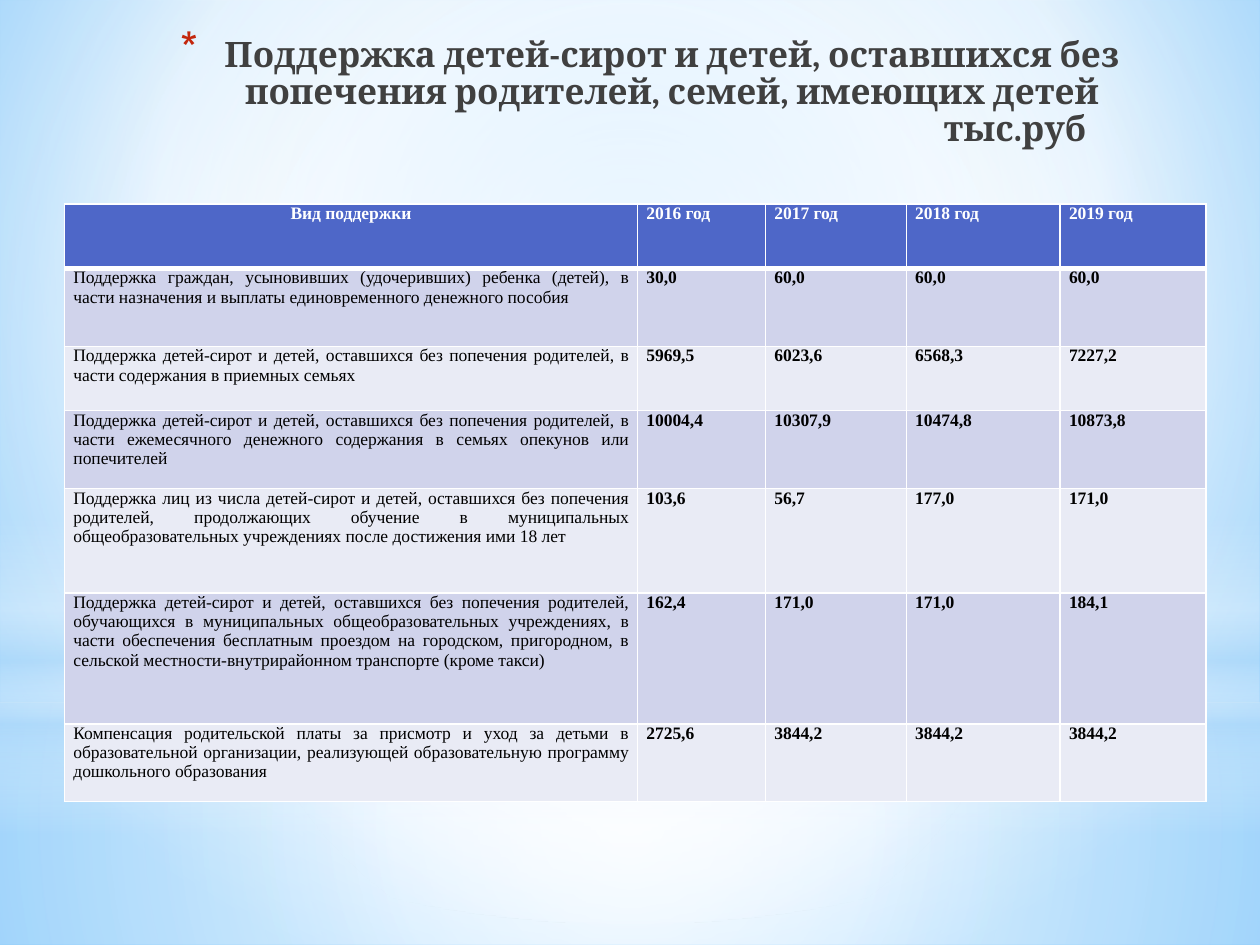
"""Builds the slide on support for orphans and families with children."""
from pptx import Presentation
from pptx.dml.color import RGBColor as RGB
from pptx.enum.shapes import MSO_SHAPE as Preset
from pptx.enum.text import MSO_ANCHOR as Anchor, MSO_AUTO_SIZE as AutoSize, PP_ALIGN as Align
from pptx.oxml import parse_xml
from pptx.oxml.ns import nsdecls, qn
from pptx.util import Cm, Pt

COLORS = {
    "white": "FFFFFF", "sky": "9ED5FF", "azure": "5BB9FF", "haze": "B4DCFA",
    "heading": "404040", "bullet": "C3260C", "text": "000000",
    "header": "4E67C8", "odd": "D0D3EB", "even": "E9EBF5",
}
CENTER = (50, 50, 50, 50)
BANDS = [
    (Preset.RECTANGLE, (0, 14.17, 25.4, 4.88),
     [(0, "white", 91), (37, "white", 76), (100, "haze", 79)], CENTER),
    (Preset.RECTANGLE, (0, 0, 25.4, 14.17),
     [(0, "white", 89), (48, "white", 62), (100, "haze", 79)], CENTER),
    (Preset.RECTANGLE, (0, 10.46, 25.4, 6.35),
     [(0, "white", 0), (29, "white", 30), (45, "haze", 40), (55, "white", 26),
      (65, "haze", 60), (100, "white", 0)], None),
    (Preset.OVAL, (0, 4.45, 25.4, 14.17), [(0, "white", 100), (56, "white", 0)], CENTER),
]
HEADING = "Поддержка детей-сирот и детей, оставшихся без попечения родителей, семей, имеющих детей"
UNIT = "тыс.руб"
COLUMN_WIDTHS = [11.55, 2.58, 2.84, 3.1, 2.94]
ROW_HEIGHTS = [1.3, 1.57, 1.3, 1.57, 2.1, 2.64, 1.57]
SUPPORT = [
    ["Вид поддержки", "2016 год", "2017 год", "2018 год", "2019 год"],
    ["Поддержка граждан, усыновивших (удочеривших) ребенка (детей), в части назначения "
     "и выплаты единовременного денежного пособия", "30,0", "60,0", "60,0", "60,0"],
    ["Поддержка детей-сирот и детей, оставшихся без попечения родителей, в части "
     "содержания в приемных семьях", "5969,5", "6023,6", "6568,3", "7227,2"],
    ["Поддержка детей-сирот и детей, оставшихся без попечения родителей, в части "
     "ежемесячного денежного содержания в семьях опекунов или попечителей",
     "10004,4", "10307,9", "10474,8", "10873,8"],
    ["Поддержка лиц из числа детей-сирот и детей, оставшихся без попечения родителей, "
     "продолжающих обучение в муниципальных общеобразовательных учреждениях после "
     "достижения ими 18 лет", "103,6", "56,7", "177,0", "171,0"],
    ["Поддержка детей-сирот и детей, оставшихся без попечения родителей, обучающихся в "
     "муниципальных общеобразовательных учреждениях, в части обеспечения бесплатным "
     "проездом на городском, пригородном, в сельской местности-внутрирайонном транспорте "
     "(кроме такси)", "162,4", "171,0", "171,0", "184,1"],
    ["Компенсация родительской платы за присмотр и уход за детьми в образовательной "
     "организации, реализующей образовательную программу дошкольного образования",
     "2725,6", "3844,2", "3844,2", "3844,2"],
]


def assign(target, values):
    """Set each named attribute of the target."""
    for name, value in values.items():
        setattr(target, name, value)


class SlideBuilder:
    """Holds the style and the current slide."""

    heading_font = {"name": "Cambria", "size": Pt(20), "bold": True}
    cell_font = {"name": "Times New Roman", "size": Pt(10)}
    cell_margins = {"margin_left": Cm(0.18), "margin_right": Cm(0.18),
                    "margin_top": 0, "margin_bottom": 0}

    def __init__(self, slide):
        self.slide = slide

    def style_font(self, font, values, color):
        """Apply format values and a colour to a font."""
        assign(font, values)
        font.color.rgb = RGB.from_string(COLORS[color])

    def gradient(self, owner, element, stops, focus):
        """Give the owner a radial gradient, or a vertical one without a focus."""
        owner.fill.gradient()
        old = element.find(".//" + qn("a:gradFill"))
        stop_xml = "".join(
            f'<a:gs pos="{place * 1000}"><a:srgbClr val="{COLORS[color]}">'
            f'<a:alpha val="{opacity * 1000}"/></a:srgbClr></a:gs>'
            for place, color, opacity in stops)
        direction = '<a:lin ang="5400000" scaled="0"/>'
        if focus:
            sides = " ".join(f'{side}="{part * 1000}"' for side, part in zip("ltrb", focus))
            direction = f'<a:path path="circle"><a:fillToRect {sides}/></a:path>'
        old.getparent().replace(old, parse_xml(
            f'<a:gradFill {nsdecls("a")} rotWithShape="1"><a:gsLst>{stop_xml}</a:gsLst>'
            f'{direction}</a:gradFill>'))

    def backdrop(self):
        """Fill the slide background."""
        stops = [(0, "sky", 100), (60, "white", 100), (100, "azure", 100)]
        self.gradient(self.slide.background, self.slide.element, stops, (20, 10, 20, 60))

    def band(self, preset, box, stops, focus):
        """Add a translucent layer of light."""
        layer = self.slide.shapes.add_shape(preset, *map(Cm, box))
        layer.shadow.inherit = False
        layer.line.fill.background()
        self.gradient(layer, layer.element, stops, focus)

    def title(self, heading, unit):
        """Place the bulleted heading and its unit line above the layers."""
        title = self.slide.shapes.title
        self.slide.shapes.element.append(title.element)
        assign(title, {"left": Cm(1.9), "top": Cm(0.53), "width": Cm(22.4), "height": Cm(3)})
        frame = title.text_frame
        assign(frame, {"word_wrap": True, "auto_size": AutoSize.NONE,
                       "vertical_anchor": Anchor.TOP, "margin_top": Cm(0.23)})
        lines = [(frame.paragraphs[0], heading, Align.CENTER, 0.89, -0.89),
                 (frame.add_paragraph(), unit, Align.LEFT, 16.87, 0)]
        for line, words, align, margin, indent in lines:
            assign(line, {"text": words, "alignment": align, "line_spacing": 0.88,
                          "space_before": Pt(0)})
            self.style_font(line.runs[0].font, self.heading_font, "heading")
            properties = line._p.get_or_add_pPr()
            properties.set("marL", str(Cm(margin)))
            properties.set("indent", str(Cm(indent)))
        bullet = (f'<a:buClr {nsdecls("a")}><a:srgbClr val="{COLORS["bullet"]}"/></a:buClr>',
                  f'<a:buSzPct {nsdecls("a")} val="128000"/>',
                  f'<a:buChar {nsdecls("a")} char="*"/>')
        for part in bullet:
            lines[0][0]._p.get_or_add_pPr().append(parse_xml(part))

    def borders(self, cell, top, bottom):
        """Draw white cell borders, with the given top and bottom widths."""
        widths = {"L": 1, "R": 1, "T": top, "B": bottom}
        for place, (side, width) in enumerate(widths.items()):
            cell._tc.get_or_add_tcPr().insert(place, parse_xml(
                f'<a:ln{side} {nsdecls("a")} w="{Pt(width)}"><a:solidFill>'
                f'<a:srgbClr val="{COLORS["white"]}"/></a:solidFill></a:ln{side}>'))

    def table(self, rows, widths, heights):
        """Add the table of support by year."""
        box = map(Cm, (1.3, 4.11, sum(widths), sum(heights)))
        table = self.slide.shapes.add_table(len(rows), len(widths), *box).table
        for column, width in zip(table.columns, widths):
            column.width = Cm(width)
        for row, height in zip(table.rows, heights):
            row.height = Cm(height)
        for r, entries in enumerate(rows):
            fill = "header" if r == 0 else ("even", "odd")[r % 2]
            for c, words in enumerate(entries):
                cell = table.cell(r, c)
                assign(cell, {"text": words, **self.cell_margins})
                cell.fill.solid()
                cell.fill.fore_color.rgb = RGB.from_string(COLORS[fill])
                self.borders(cell, 3 if r == 1 else 1, 3 if r == 0 else 1)
                line = cell.text_frame.paragraphs[0]
                line.alignment = Align.CENTER if r == c == 0 else Align.JUSTIFY
                self.style_font(line.runs[0].font, {**self.cell_font, "bold": r == 0 or c > 0},
                                "white" if r == 0 else "text")


def main():
    """Build and save the presentation."""
    deck = Presentation()
    assign(deck, {"slide_width": Cm(25.4), "slide_height": Cm(19.05)})
    builder = SlideBuilder(deck.slides.add_slide(deck.slide_layouts[5]))
    builder.backdrop()
    for band in BANDS:
        builder.band(*band)
    builder.title(HEADING, UNIT)
    builder.table(SUPPORT, COLUMN_WIDTHS, ROW_HEIGHTS)
    deck.save("out.pptx")


if __name__ == "__main__":
    main()
